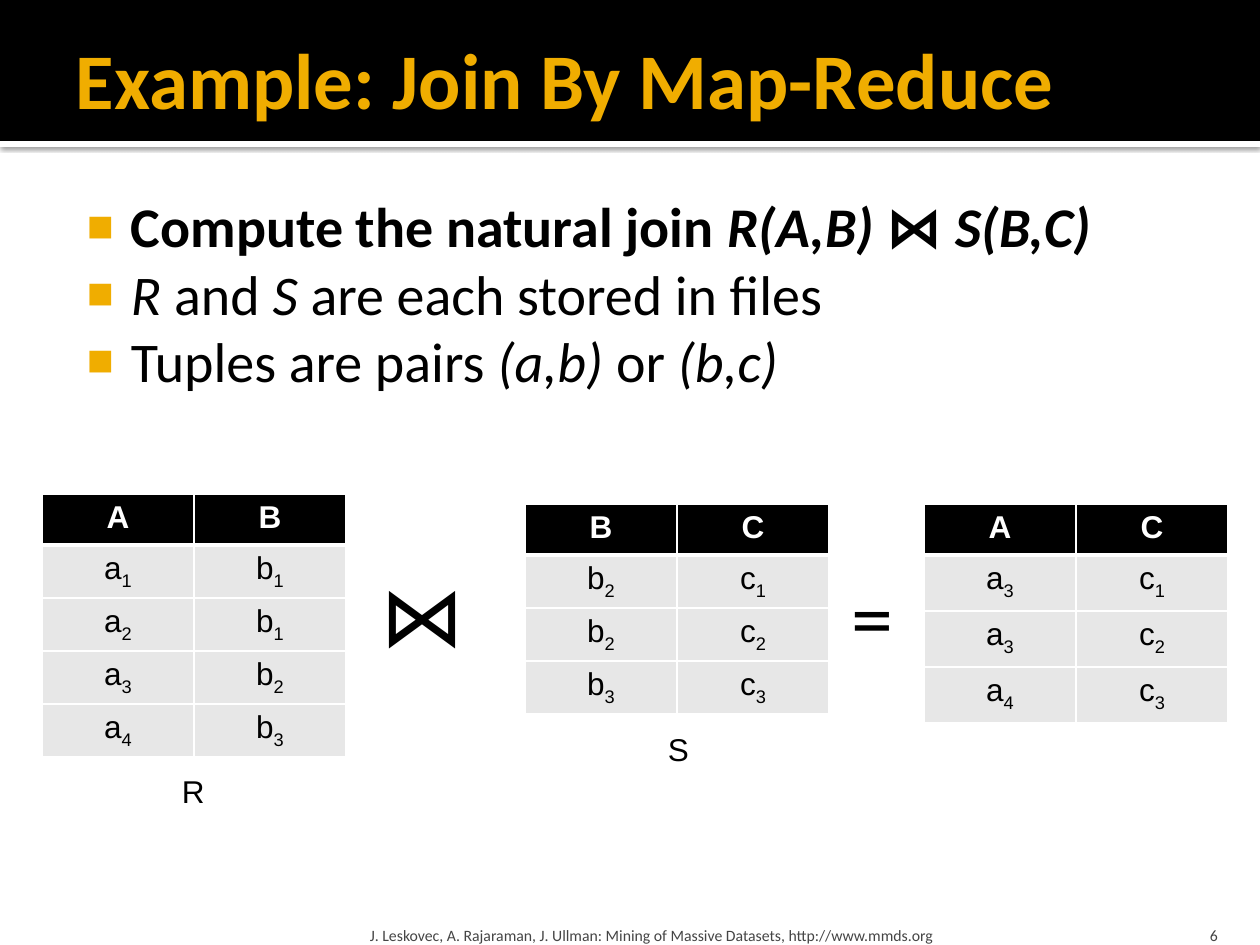
from lxml.etree import SubElement
from pptx import Presentation
from pptx.dml.color import RGBColor
from pptx.enum.shapes import MSO_SHAPE
from pptx.enum.text import MSO_ANCHOR, MSO_AUTO_SIZE, PP_ALIGN
from pptx.oxml import parse_xml
from pptx.oxml.ns import nsdecls, qn
from pptx.util import Emu, Pt

PX = 914400 / 126
BLACK, WHITE, GOLD, GREY, PALE = "000000", "FFFFFF", "F0AD00", "454545", "E7E7E7"


def px(length):
    return Emu(round(length * PX))


def color(code):
    return RGBColor.from_string(code)


class Deck:
    head_font = "Calibri"
    table_font = "Arial"

    def __init__(self, width, height):
        self.deck = Presentation()
        self.deck.slide_width, self.deck.slide_height = px(width), px(height)
        self.page = self.deck.slides.add_slide(self.deck.slide_layouts[5])

    def span(self, para, text, size, font=None, code=BLACK, bold=False, italic=False, sub=False):
        span = para.add_run()
        span.text = text
        style = span.font
        style.name, style.size = font or self.head_font, Pt(size)
        style.bold, style.italic = bold, italic
        style.color.rgb = color(code)
        if sub:
            span._r.get_or_add_rPr().set("baseline", "-25000")

    def frame(self, box, insets, anchor=MSO_ANCHOR.TOP, wrap=True):
        frame = box.text_frame
        frame.word_wrap, frame.vertical_anchor = wrap, anchor
        frame.auto_size = MSO_AUTO_SIZE.NONE if wrap else MSO_AUTO_SIZE.SHAPE_TO_FIT_TEXT
        (frame.margin_left, frame.margin_top,
         frame.margin_right, frame.margin_bottom) = map(px, insets)
        return frame

    def band(self, place, fill, shadow=False):
        band = self.page.shapes.add_shape(MSO_SHAPE.RECTANGLE, *map(px, place))
        band.shadow.inherit = False
        band.fill.solid()
        band.fill.fore_color.rgb = color(fill)
        band.line.fill.background()
        if shadow:
            effects = band._element.spPr.find(qn("a:effectLst"))
            effects.append(parse_xml(
                f'<a:outerShdw {nsdecls("a")} blurRad="31750" dist="10160" dir="5400000" '
                'algn="t" rotWithShape="0"><a:srgbClr val="000000"><a:alpha val="60000"/>'
                '</a:srgbClr></a:outerShdw>'))

    def title(self, place, text):
        box = self.page.shapes.title
        box.left, box.top, box.width, box.height = map(px, place)
        para = self.frame(box, (13, 6, 6, 6), MSO_ANCHOR.MIDDLE).paragraphs[0]
        para.alignment = PP_ALIGN.LEFT
        self.span(para, text, 45, code=GOLD, bold=True)
        # Bring the title in front of the bands
        self.page.shapes._spTree.append(box._element)

    def bullets(self, place, items):
        box = self.page.shapes.add_textbox(*map(px, place))
        frame = self.frame(box, (8, 13, 13, 6))
        for index, (bold, spans) in enumerate(items):
            para = frame.add_paragraph() if index else frame.paragraphs[0]
            props = para._p.get_or_add_pPr()
            props.set("marL", str(px(60)))
            props.set("indent", str(px(-44)))
            SubElement(SubElement(props, qn("a:buClr")), qn("a:srgbClr")).set("val", GOLD)
            SubElement(props, qn("a:buSzPct")).set("val", "80000")
            SubElement(props, qn("a:buFont")).set("typeface", self.table_font)
            SubElement(props, qn("a:buChar")).set("char", "■")
            for text, italic in spans:
                self.span(para, text, 32, bold=bold, italic=italic)

    def label(self, place, text, size, font=None):
        box = self.page.shapes.add_textbox(*map(px, place))
        frame = self.frame(box, (13, 6, 13, 6), wrap=False)
        self.span(frame.paragraphs[0], text, size, font)

    def footer(self, place, text, side, align=PP_ALIGN.LEFT):
        box = self.page.shapes.add_textbox(*map(px, place))
        para = self.frame(box, (side, 6, side, 0), MSO_ANCHOR.BOTTOM).paragraphs[0]
        para.alignment = align
        self.span(para, text, 9, code=GREY)

    def borders(self, cell, bottom):
        props = cell._tc.get_or_add_tcPr()
        for side, width in (("L", 1), ("R", 1), ("T", 1), ("B", bottom)):
            line = SubElement(props, qn(f"a:ln{side}"), w=str(Pt(width)))
            SubElement(SubElement(line, qn("a:solidFill")), qn("a:srgbClr")).set("val", WHITE)

    def relation(self, left, top, row_height, heads, tuples):
        rows = [heads, *tuples]
        width, head_height = 152, 51
        height = head_height + row_height * len(tuples)
        table = self.page.shapes.add_table(
            len(rows), len(heads), px(left), px(top), px(width * len(heads)), px(height)).table
        table.horz_banding = False
        for column in table.columns:
            column.width = px(width)
        for r, values in enumerate(rows):
            is_head = r == 0
            table.rows[r].height = px(head_height if is_head else row_height)
            for c, value in enumerate(values):
                cell = table.cell(r, c)
                self.borders(cell, 3 if is_head else 1)
                cell.fill.solid()
                cell.fill.fore_color.rgb = color(BLACK if is_head else PALE)
                para = cell.text_frame.paragraphs[0]
                para.alignment = PP_ALIGN.CENTER
                self.span(para, value[0], 18, self.table_font,
                          WHITE if is_head else BLACK, bold=is_head)
                if value[1:]:
                    self.span(para, value[1:], 18, self.table_font, sub=True)


def main():
    show = Deck(1260, 945)

    # Header
    show.band((0, 141, 1260, 6), WHITE, shadow=True)
    show.band((0, 0, 1260, 141), BLACK)
    show.title((63, 10, 1134, 136), "Example: Join By Map-Reduce")

    # Bullets: (bold, [(text, italic), ...])
    show.bullets((63, 179, 1134, 294), [
        (True, [("Compute the natural join ", False), ("R(A,B) ", True),
                ("⋈", False), (" S(B,C)", True)]),
        (False, [("R", True), (" and ", False), ("S", True),
                 (" are each stored in files", False)]),
        (False, [("Tuples are pairs ", False), ("(a,b)", True),
                 (" or ", False), ("(b,c)", True)]),
    ])

    # Footer
    show.footer((364, 907, 759, 38), "J. Leskovec, A. Rajaraman, J. Ullman: "
                "Mining of Massive Datasets, http://www.mmds.org", 6)
    show.footer((1130, 907, 101, 38), "6", 13, PP_ALIGN.RIGHT)

    # R joined with S gives the result
    show.relation(42, 494, 53, "AB",
                  [("a1", "b1"), ("a2", "b1"), ("a3", "b2"), ("a4", "b3")])
    show.relation(525, 504, 53, "BC", [("b2", "c1"), ("b2", "c2"), ("b3", "c3")])
    show.relation(924, 504, 56, "AC", [("a3", "c1"), ("a3", "c2"), ("a4", "c3")])
    show.label((368, 557, 96, 115), "⋈", 48)
    show.label((839, 559, 69, 115), "=", 48)
    show.label((169, 766, 48, 50), "R", 18, show.table_font)
    show.label((655, 724, 48, 50), "S", 18, show.table_font)

    show.deck.save("out.pptx")


if __name__ == "__main__":
    main()
